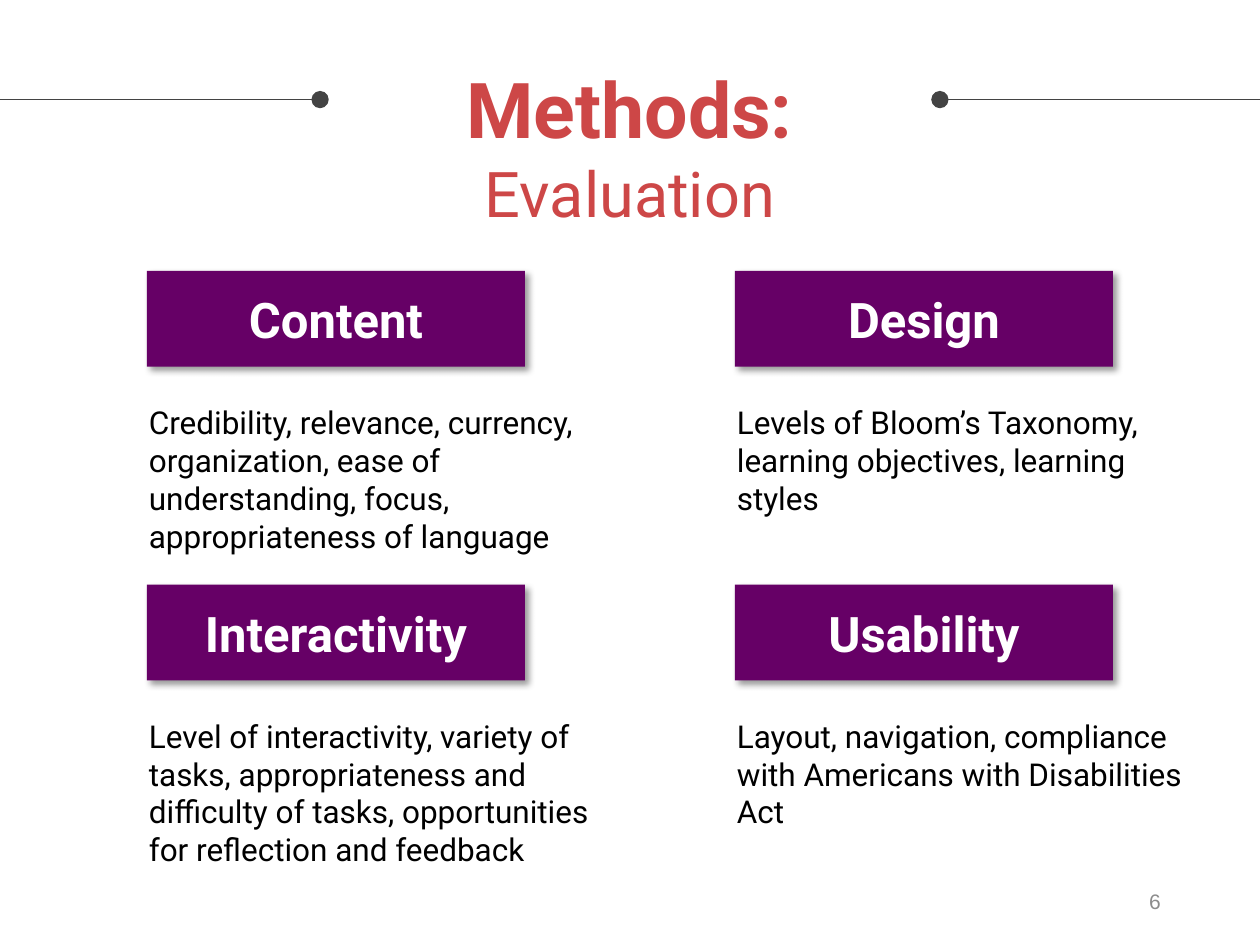
from lxml import etree
from pptx import Presentation
from pptx.dml.color import RGBColor
from pptx.enum import shapes, text
from pptx.oxml import parse_xml
from pptx.oxml.ns import nsdecls, qn
from pptx.util import Pt


def color(value):
    return RGBColor.from_string(value)


def add_span(para, words, size, shade, bold=False, face="Roboto"):
    span = para.add_run()
    span.text = words
    span.font.name = face
    span.font.size = Pt(size)
    span.font.bold = bold
    span.font.color.rgb = color(shade)


deck = Presentation()
deck.slide_width, deck.slide_height = Pt(720), Pt(540)
page = deck.slides.add_slide(deck.slide_layouts[6])

for start, end in [(182.9, -2), (537.1, 720.7)]:
    rule = page.shapes.add_connector(
        shapes.MSO_CONNECTOR.STRAIGHT, Pt(start), Pt(56.9), Pt(end), Pt(56.9))
    rule.line.color.rgb = color("434343")
    rule.line.width = Pt(0.75)
    outline = rule.line._get_or_add_ln()
    etree.SubElement(outline, qn("a:headEnd"), type="oval", w="lg", len="lg")
    etree.SubElement(rule._element.spPr, qn("a:effectLst"))

title = page.shapes.add_textbox(Pt(143.3), Pt(38.2), Pt(433.4), Pt(90)).text_frame
title.word_wrap = True
title.vertical_anchor = text.MSO_ANCHOR.MIDDLE
title.margin_left = title.margin_right = Pt(7.2)
title.margin_top = title.margin_bottom = Pt(7.2)
para = title.paragraphs[0]
para.alignment = text.PP_ALIGN.CENTER
add_span(para, "Methods:", 44, "CD4747", True)
para.add_line_break()
add_span(para, "Evaluation", 36, "CD4747")

criteria = [
    ("Content", "Credibility, relevance, currency, organization, ease of "
     "understanding, focus, appropriateness of language"),
    ("Design", "Levels of Bloom’s Taxonomy, learning objectives, learning styles"),
    ("Interactivity", "Level of interactivity, variety of tasks, appropriateness and "
     "difficulty of tasks, opportunities for reflection and feedback"),
    ("Usability", "Layout, navigation, compliance with Americans with Disabilities Act"),
]
for index, (heading, details) in enumerate(criteria):
    row, column = divmod(index, 2)
    left = 84 + 336 * column
    top = 154.8 + 179.3 * row

    box = page.shapes.add_shape(
        shapes.MSO_SHAPE.RECTANGLE, Pt(left), Pt(top), Pt(216), Pt(54.8))
    box.fill.solid()
    box.fill.fore_color.rgb = color("660066")
    box.line.fill.background()
    box._element.spPr.append(parse_xml(
        f'<a:effectLst {nsdecls("a")}>'
        f'<a:outerShdw blurRad="{Pt(4)}" dist="{Pt(3)}" dir="2700000" algn="tl" rotWithShape="0">'
        '<a:srgbClr val="000000"><a:alpha val="40000"/></a:srgbClr>'
        '</a:outerShdw></a:effectLst>'))
    box.text_frame.vertical_anchor = text.MSO_ANCHOR.MIDDLE
    para = box.text_frame.paragraphs[0]
    para.alignment = text.PP_ALIGN.CENTER
    add_span(para, heading, 28, "FFFFFF", True)

    body = page.shapes.add_textbox(
        Pt(left - 6), Pt(top + 72), Pt(285), Pt(94.3 - 21.6 * column)).text_frame
    body.word_wrap = True
    body.auto_size = text.MSO_AUTO_SIZE.SHAPE_TO_FIT_TEXT
    add_span(body.paragraphs[0], details, 18, "000000")

number = page.shapes.add_textbox(Pt(508.3), Pt(500.4), Pt(162), Pt(28.8)).text_frame
number.word_wrap = True
number.vertical_anchor = text.MSO_ANCHOR.MIDDLE
para = number.paragraphs[0]
para.alignment = text.PP_ALIGN.RIGHT
add_span(para, "6", 12, "8C8C8C", face="Arial")

deck.save("out.pptx")
